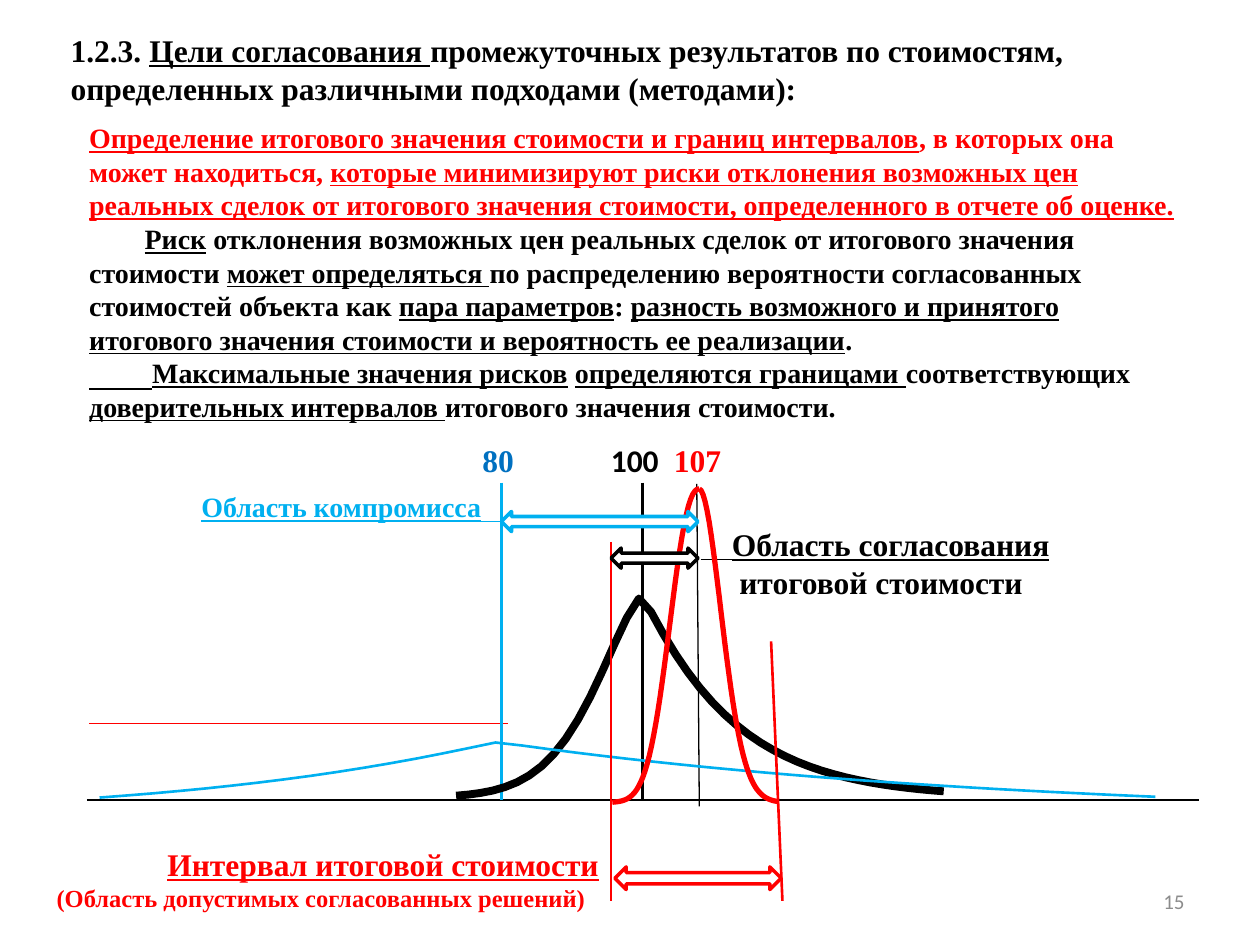
from dataclasses import dataclass
from math import exp

from lxml.etree import SubElement
from pptx import Presentation
from pptx.dml.color import RGBColor
from pptx.enum.shapes import MSO_CONNECTOR as Connector, MSO_SHAPE as Shape
from pptx.enum.text import MSO_ANCHOR as Anchor, PP_ALIGN as Align
from pptx.oxml.ns import qn
from pptx.util import Inches, Pt

SERIF, SANS = "Times New Roman", "Calibri"
BLACK, RED, SKY, BLUE = "000000", "FF0000", "00B0F0", "0070C0"
GRAY, WHITE = "8C8C8C", "FFFFFF"

# Horizontal places of the marked values and of the interval's left limit
X_80, X_100, X_107, X_LIMIT = 3.98, 5.1, 5.54, 4.85
AXIS_Y, MARKER_TOP = 6.35, 3.83


@dataclass
class Bell:
    """Skewed bell: each side is (spread, power) of exp(-(distance / spread) ** power)."""
    mode: float
    base: float
    height: float
    left: tuple
    right: tuple

    def y(self, x):
        spread, power = self.left if x < self.mode else self.right
        return self.base - self.height * exp(-(abs(x - self.mode) / spread) ** power)

    def points(self, start, end, steps=40):
        xs = [start + (end - start) * step / steps for step in range(steps + 1)]
        return [(x, self.y(x)) for x in xs]


AGREED = Bell(mode=5.1, base=6.33, height=1.6, left=(0.53, 1.5), right=(0.73, 1.05))
WIDE = Bell(mode=3.95, base=6.5, height=0.61, left=(2.5, 1.05), right=(4.2, 1))
NARROW = Bell(mode=5.55, base=6.37, height=2.49, left=(0.3, 2.3), right=(0.25, 1.9))


def rgb(hex_color):
    return RGBColor.from_string(hex_color)


def set_line(shape, color, width):
    shape.line.color.rgb = rgb(color)
    shape.line.width = Pt(width)


def write_line(paragraph, runs, size, color, font=SERIF, bold=True, tab=None):
    """Fill a paragraph with (text, underlined) runs; tab is its tab stop in inches."""
    paragraph.alignment = Align.LEFT
    if tab:
        tab_list = SubElement(paragraph._p.get_or_add_pPr(), qn("a:tabLst"))
        SubElement(tab_list, qn("a:tab"), pos=str(Inches(tab)), algn="l")
    for text, underlined in runs:
        run = paragraph.add_run()
        run.text = text
        run.font.name, run.font.size = font, Pt(size)
        run.font.bold, run.font.underline = bold, underlined
        run.font.color.rgb = rgb(color)


def add_text(slide, box, lines):
    """Add a text box; each line holds the arguments of write_line."""
    frame = slide.shapes.add_textbox(*map(Inches, box)).text_frame
    frame.word_wrap = True
    for index, line in enumerate(lines):
        paragraph = frame.add_paragraph() if index else frame.paragraphs[0]
        write_line(paragraph, **line)
    return frame


def add_line(slide, start, end, color, width):
    line = slide.shapes.add_connector(Connector.STRAIGHT, *map(Inches, start + end))
    set_line(line, color, width)
    SubElement(line._element.spPr, qn("a:effectLst"))


def add_curve(slide, points, color, width):
    start, *rest = [(Inches(x), Inches(y)) for x, y in points]
    builder = slide.shapes.build_freeform(*start)
    builder.add_line_segments(rest, close=False)
    curve = builder.convert_to_shape()
    curve.fill.background()
    curve.shadow.inherit = False
    set_line(curve, color, width)


def add_range(slide, box, color, fill=None):
    arrow = slide.shapes.add_shape(Shape.LEFT_RIGHT_ARROW, *map(Inches, box))
    arrow.shadow.inherit = False
    if fill:
        arrow.fill.solid()
        arrow.fill.fore_color.rgb = rgb(fill)
    else:
        arrow.fill.background()
    set_line(arrow, color, 2)


def add_title(slide):
    title = slide.shapes.title
    title.left, title.top, title.width, title.height = map(Inches, (0.46, 0.24, 9, 0.61))
    title.text_frame.vertical_anchor = Anchor.MIDDLE
    write_line(title.text_frame.paragraphs[0], [
        ("1.2.3. ", False), ("Цели согласования ", True),
        ("промежуточных результатов по стоимостям, определенных различными "
         "подходами (методами):", False)], 18, BLACK)


def add_body(slide):
    goal = [
        ("Определение итогового значения стоимости и границ интервалов", True),
        (", в которых она может находиться, ", False),
        ("которые минимизируют риски отклонения возможных цен реальных сделок от "
         "итогового значения стоимости, определенного в отчете об оценке.", True)]
    risk = [
        ("\t", False), ("Риск", True),
        (" отклонения возможных цен реальных сделок от итогового значения стоимости ", False),
        ("может определяться ", True),
        ("по распределению вероятности согласованных стоимостей объекта как ", False),
        ("пара параметров", True), (": ", False),
        ("разность возможного и принятого итогового значения стоимости и "
         "вероятность ее реализации", True), (".", False)]
    limits = [
        ("\t", False), ("Максимальные значения рисков", True), (" ", False),
        ("определяются границами ", True), ("соответствующих ", False),
        ("доверительных интервалов ", True), ("итогового значения стоимости.", False)]
    compromise = [("\t", False), ("Область компромисса", True)]
    frame = add_text(slide, (0.61, 0.91, 8.9, 5.49), [
        dict(runs=goal, size=16, color=RED),
        dict(runs=risk, size=16, color=BLACK, tab=0.44),
        dict(runs=limits, size=16, color=BLACK, tab=0.5),
        dict(runs=compromise, size=16, color=SKY, tab=0.89)])
    frame.paragraphs[-1].space_before = Pt(38)


def add_rules(slide):
    """Draw the rules that lengthen the underlines, and the one left of the curves."""
    for left, right, y, color, width in [
            (0.71, 1.21, 3.09, BLACK, 1), (3.82, X_80, 4.14, SKY, 1),
            (5.56, 5.81, 4.44, BLACK, 1), (0.71, 4.03, 5.74, RED, 0.5)]:
        add_line(slide, (left, y), (right, y), color, width)


def add_distributions(slide):
    # Axis and value markers
    add_line(slide, (0.69, AXIS_Y), (9.52, AXIS_Y), BLACK, 1.5)
    for x, color, width in [(X_80, SKY, 1.5), (X_100, BLACK, 1.5)]:
        add_line(slide, (x, MARKER_TOP), (x, AXIS_Y), color, width)
    add_line(slide, (5.53, 3.84), (5.55, 6.4), BLACK, 0.75)

    # Curves; the narrow one is drawn as two halves that meet at its mode
    for bell, start, end, color, width in [
            (AGREED, 3.62, 7.49, BLACK, 4.5), (WIDE, 0.79, 9.17, SKY, 1.5),
            (NARROW, 4.86, NARROW.mode, RED, 3), (NARROW, NARROW.mode, 6.18, RED, 3)]:
        add_curve(slide, bell.points(start, end), color, width)

    # Values above the markers
    for value, left, width, color, font in [
            ("80", 3.73, 0.5, BLUE, SERIF), ("100", 4.75, 0.63, BLACK, SANS),
            ("107", 5.25, 0.63, RED, SERIF)]:
        add_text(slide, (left, 3.45, width, 0.4),
                 [dict(runs=[(value, False)], size=18, color=color, font=font)])


def add_ranges(slide):
    # Limits of the final value's interval
    add_line(slide, (X_LIMIT, 4.3), (X_LIMIT, 7.15), RED, 1.5)
    add_line(slide, (6.12, 5.09), (6.21, 7.15), RED, 1.5)

    # Interval, compromise and agreement arrows
    add_range(slide, (4.88, 6.88, 1.32, 0.18), RED)
    for left, top, color in [(X_80, 4.06, SKY), (X_LIMIT, 4.35, BLACK)]:
        add_range(slide, (left, top, X_107 - left, 0.16), color, WHITE)

    # Labels
    add_text(slide, (0.35, 6.66, 4.51, 0.64), [
        dict(runs=[("\t", False), ("Интервал итоговой стоимости", True)],
             size=18, color=RED, tab=0.88),
        dict(runs=[("(Область допустимых согласованных решений)", False)],
             size=14, color=RED)])
    add_text(slide, (5.46, 4.12, 3.32, 0.71), [
        dict(runs=[("\t", False), ("Область согласования", True)],
             size=18, color=BLACK, tab=0.25),
        dict(runs=[("\tитоговой стоимости", False)], size=18, color=BLACK, tab=0.31)])


def add_page_number(slide):
    frame = add_text(slide, (7.17, 6.95, 2.33, 0.4), [
        dict(runs=[("15", False)], size=12, color=GRAY, font=SANS, bold=False)])
    frame.vertical_anchor = Anchor.MIDDLE
    frame.paragraphs[0].alignment = Align.RIGHT


def main():
    deck = Presentation()
    deck.slide_width, deck.slide_height = Inches(10), Inches(7.5)
    slide = deck.slides.add_slide(deck.slide_layouts[5])
    for add_part in (add_title, add_body, add_page_number, add_rules,
                     add_distributions, add_ranges):
        add_part(slide)
    deck.save("out.pptx")


if __name__ == "__main__":
    main()
